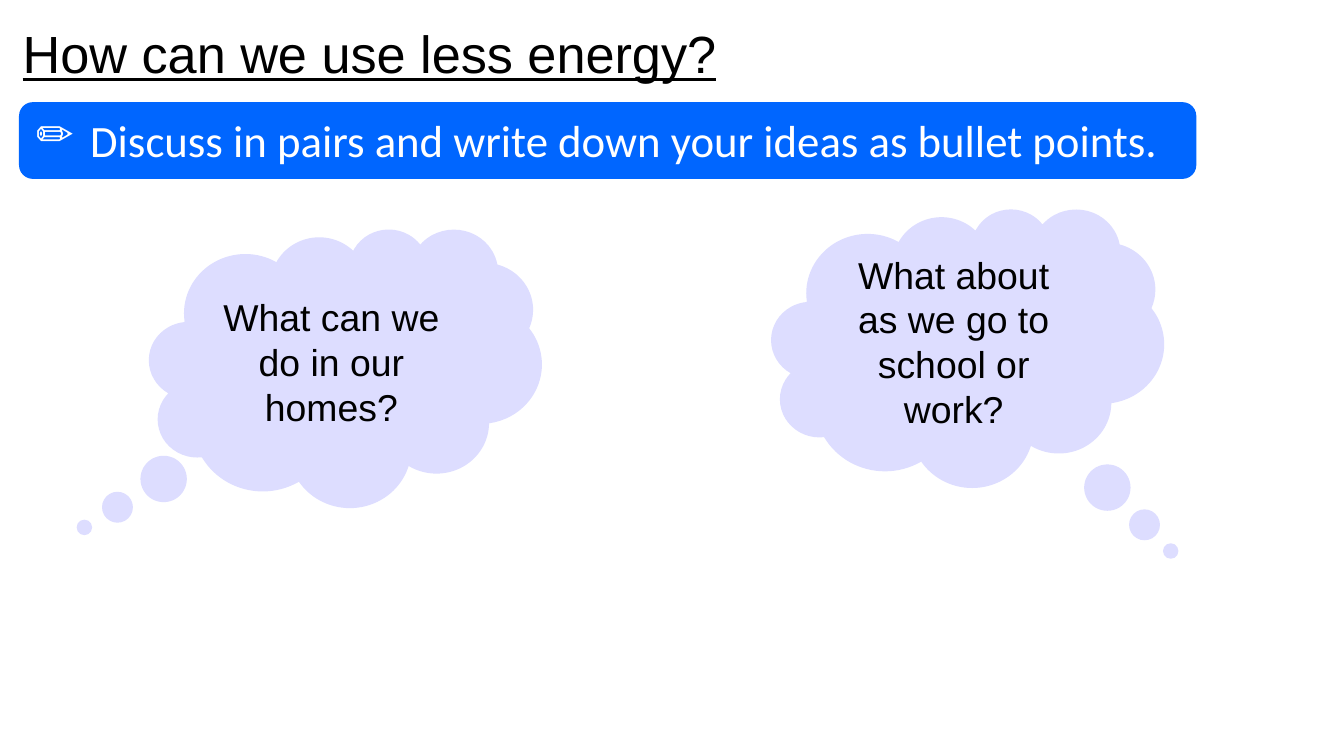
from lxml import etree
from pptx import Presentation
from pptx.dml.color import RGBColor
from pptx.enum import shapes, text
from pptx.oxml.ns import qn
from pptx.util import Cm, Pt

COLOURS = {"black": "000000", "white": "FFFFFF", "blue": "0066FF", "lilac": "DDDDFF"}

# Content
TITLE = "How can we use less energy?"
TASK = "Discuss in pairs and write down your ideas as bullet points."
TASK_BULLET = "✏"
# Question, left, top, tail position relative to the cloud
QUESTIONS = [
    ("What can we do in our homes?", 2.82, 4.32, (-0.665, 0.573)),
    ("What about as we go to school or work?", 14.58, 3.94, (0.517, 0.73)),
]
CLOUD_WIDTH, CLOUD_HEIGHT = 7.42, 5.26
BULLET_INDENT = Cm(1.02)


def write(holder, words, size, font="Arial", colour="black", underline=None,
          align=text.PP_ALIGN.LEFT, anchor=text.MSO_ANCHOR.TOP, bullet=None):
    frame = holder.text_frame
    frame.word_wrap = True
    frame.vertical_anchor = anchor
    paragraph = frame.paragraphs[0]
    paragraph.text = words
    paragraph.alignment = align
    if bullet:
        properties = paragraph._p.get_or_add_pPr()
        properties.set("marL", str(BULLET_INDENT))
        properties.set("indent", str(-BULLET_INDENT))
        etree.SubElement(properties, qn("a:buChar")).set("char", bullet)
    style = paragraph.runs[0].font
    style.name, style.size, style.underline = font, Pt(size), underline
    style.color.rgb = RGBColor.from_string(COLOURS[colour])


def add_panel(slide, preset, left, top, width, height, colour, adjustments):
    panel = slide.shapes.add_shape(preset, Cm(left), Cm(top), Cm(width), Cm(height))
    for index, value in enumerate(adjustments):
        panel.adjustments[index] = value
    panel.shadow.inherit = False
    panel.fill.solid()
    panel.fill.fore_color.rgb = RGBColor.from_string(COLOURS[colour])
    panel.line.fill.background()
    return panel


def main():
    deck = Presentation()
    deck.slide_width, deck.slide_height = Cm(25.4), Cm(14.28)
    slide = deck.slides.add_slide(deck.slide_layouts[6])

    # Title
    title = slide.shapes.add_textbox(Cm(0.18), Cm(0.28), Cm(18.26), Cm(1.45))
    write(title, TITLE, 28, underline=True)
    title.text_frame.auto_size = text.MSO_AUTO_SIZE.SHAPE_TO_FIT_TEXT

    # Task banner
    task = add_panel(slide, shapes.MSO_SHAPE.ROUNDED_RECTANGLE,
                     0.36, 1.93, 22.25, 1.45, "blue", [0.18])
    write(task, TASK, 24, font="Calibri", colour="white", bullet=TASK_BULLET)

    # Thought clouds
    for question, left, top, tail in QUESTIONS:
        cloud = add_panel(slide, shapes.MSO_SHAPE.CLOUD_CALLOUT,
                          left, top, CLOUD_WIDTH, CLOUD_HEIGHT, "lilac", tail)
        write(cloud, question, 20, align=text.PP_ALIGN.CENTER,
              anchor=text.MSO_ANCHOR.MIDDLE)

    deck.save("out.pptx")


if __name__ == "__main__":
    main()
